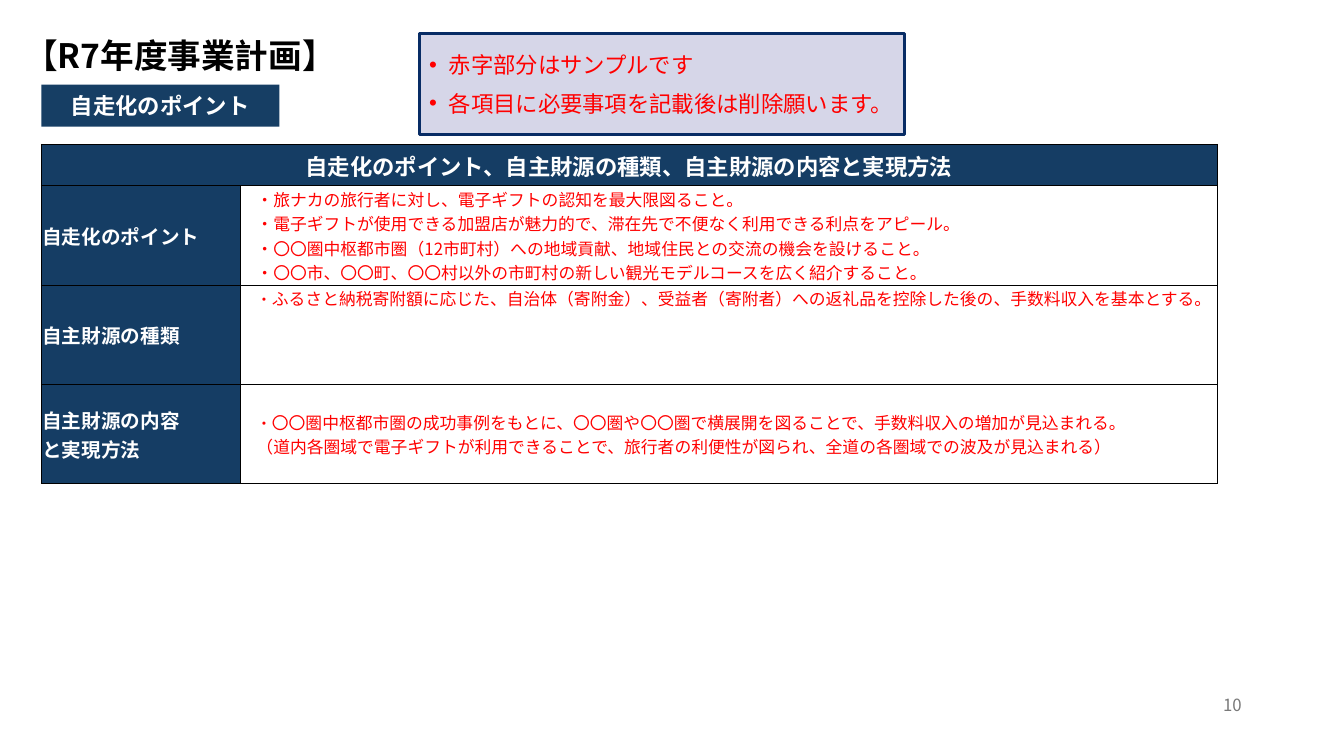
from dataclasses import dataclass

from lxml import etree
from pptx import Presentation
from pptx.dml.color import RGBColor
from pptx.enum import shapes, text
from pptx.oxml import ns
from pptx.util import Pt


@dataclass(frozen=True)
class Theme:
    """Colours, type sizes and font of the slide."""
    font: str = "Noto Sans CJK JP"
    black: str = "000000"
    white: str = "FFFFFF"
    red: str = "FF0000"
    grey: str = "797979"
    label: str = "163E64"
    header: str = "153D64"
    callout: str = "D6D6E8"
    callout_line: str = "082C65"
    title_size: int = 24
    heading_size: int = 16
    row_size: int = 14
    body_size: int = 12
    mark_size: int = 11


THEME = Theme()
LEFT, CENTER, RIGHT = text.PP_ALIGN.LEFT, text.PP_ALIGN.CENTER, text.PP_ALIGN.RIGHT
MIDDLE, TOP = text.MSO_ANCHOR.MIDDLE, text.MSO_ANCHOR.TOP

TABLE_HEADING = "自走化のポイント、自主財源の種類、自主財源の内容と実現方法"
TABLE_ROWS = [
    ("自走化のポイント", MIDDLE, [
        "・旅ナカの旅行者に対し、電子ギフトの認知を最大限図ること。",
        "・電子ギフトが使用できる加盟店が魅力的で、滞在先で不便なく利用できる利点をアピール。",
        "・〇〇圏中枢都市圏（12市町村）への地域貢献、地域住民との交流の機会を設けること。",
        "・〇〇市、〇〇町、〇〇村以外の市町村の新しい観光モデルコースを広く紹介すること。",
    ]),
    ("自主財源の種類", TOP, [
        [("・", THEME.mark_size),
         ("ふるさと納税寄附額に応じた、自治体（寄附金）、受益者（寄附者）への返礼品を控除した後の、"
          "手数料収入を基本とする。", THEME.body_size)],
    ]),
    ("自主財源の内容\n と実現方法".replace(" ", ""), MIDDLE, [
        [("・", THEME.mark_size),
         ("〇〇圏中枢都市圏の成功事例をもとに、〇〇圏や〇〇圏で横展開を図ることで、"
          "手数料収入の増加が見込まれる。", THEME.body_size)],
        "（道内各圏域で電子ギフトが利用できることで、旅行者の利便性が図られ、全道の各圏域での波及が見込まれる）",
    ]),
]


def apply(target, values):
    """Set each named value on the target."""
    for name, value in values.items():
        setattr(target, name, value)


def place(shape, box):
    """Move a shape to a box given in points."""
    apply(shape, dict(zip(("left", "top", "width", "height"), map(Pt, box))))


def paint(fill, color):
    """Give a fill one solid colour."""
    fill.solid()
    fill.fore_color.rgb = RGBColor.from_string(color)


def write(frame, paragraphs, size, color, bold=False, **layout):
    """Write paragraphs of plain text or (text, size) pieces."""
    for index, content in enumerate(paragraphs):
        paragraph = frame.add_paragraph() if index else frame.paragraphs[0]
        apply(paragraph, layout)
        pieces = [(content, size)] if isinstance(content, str) else content
        for piece, piece_size in pieces:
            for number, line in enumerate(piece.split("\n")):
                if number:
                    paragraph.add_line_break()
                run = paragraph.add_run()
                run.text = line
                apply(run.font, {"name": THEME.font, "size": Pt(piece_size), "bold": bold})
                run.font.color.rgb = RGBColor.from_string(color)
                east_asian = etree.SubElement(run.font._element, ns.qn("a:ea"))
                east_asian.set("typeface", THEME.font)


def add_panel(slide, box, color):
    """Add a flat rectangle and return it."""
    panel = slide.shapes.add_shape(shapes.MSO_SHAPE.RECTANGLE, *map(Pt, box))
    panel.shadow.inherit = False
    paint(panel.fill, color)
    panel.line.fill.background()
    apply(panel.text_frame, {"word_wrap": True, "vertical_anchor": MIDDLE})
    return panel


def add_title(slide, box):
    """Fill the title placeholder."""
    title = slide.shapes.title
    place(title, box)
    apply(title.text_frame, {"word_wrap": True, "vertical_anchor": MIDDLE,
                             "auto_size": text.MSO_AUTO_SIZE.NONE})
    write(title.text_frame, ["【R7年度事業計画】"], THEME.title_size, THEME.black, True,
          alignment=LEFT, line_spacing=0.9)


def add_section_label(slide, box):
    """Add the dark section label."""
    label = add_panel(slide, box, THEME.label)
    write(label.text_frame, ["自走化のポイント"], THEME.heading_size, THEME.white, True,
          alignment=CENTER)


def add_callout(slide, box):
    """Add the bulleted notice with its frame."""
    callout = add_panel(slide, box, THEME.callout)
    paint(callout.line.fill, THEME.callout_line)
    callout.line.width = Pt(2.25)
    frame = callout.text_frame
    write(frame, ["赤字部分はサンプルです", "各項目に必要事項を記載後は削除願います。"],
          THEME.heading_size, THEME.red, alignment=LEFT)
    frame.paragraphs[1].space_before = Pt(8)
    for paragraph in frame.paragraphs:
        properties = paragraph._p.get_or_add_pPr()
        properties.set("marL", str(Pt(14)))
        properties.set("indent", str(-Pt(14)))
        bullet_font = etree.SubElement(properties, ns.qn("a:buFont"))
        bullet_font.set("typeface", "Arial")
        etree.SubElement(properties, ns.qn("a:buChar")).set("char", "•")


def format_cell(cell, color, anchor=MIDDLE, indent=0):
    """Set a cell's fill, margins, anchor and thin borders."""
    paint(cell.fill, color)
    apply(cell, {"margin_left": Pt(0.72 + indent), "margin_right": Pt(0.72),
                 "margin_top": Pt(0.72), "margin_bottom": 0, "vertical_anchor": anchor})
    properties = cell._tc.get_or_add_tcPr()
    for index, side in enumerate("LRTB"):
        border = etree.Element(ns.qn(f"a:ln{side}"), w=str(Pt(0.5)))
        solid = etree.SubElement(border, ns.qn("a:solidFill"))
        etree.SubElement(solid, ns.qn("a:srgbClr")).set("val", THEME.black)
        properties.insert(index, border)


def add_plan_table(slide, box):
    """Add the heading row and the three plan rows."""
    left, top, width, height = box
    heading_height, label_width = 29.5, 142
    row_height = (height - heading_height) / len(TABLE_ROWS)
    table = slide.shapes.add_table(len(TABLE_ROWS) + 1, 2, *map(Pt, box)).table
    apply(table, {"first_row": False, "horz_banding": False})
    table.columns[0].width, table.columns[1].width = Pt(label_width), Pt(width - label_width)
    for index, row in enumerate(table.rows):
        row.height = Pt(row_height if index else heading_height)
    heading = table.cell(0, 0)
    heading.merge(table.cell(0, 1))
    for column in range(2):
        format_cell(table.cell(0, column), THEME.header)
    write(heading.text_frame, [TABLE_HEADING], THEME.heading_size, THEME.white, True,
          alignment=CENTER)
    for index, (name, anchor, details) in enumerate(TABLE_ROWS, 1):
        label, body = table.cell(index, 0), table.cell(index, 1)
        format_cell(label, THEME.header)
        write(label.text_frame, [name], THEME.row_size, THEME.white, True)
        format_cell(body, THEME.white, anchor, indent=11)
        write(body.text_frame, details, THEME.body_size, THEME.red)


def add_page_number(slide, box):
    """Add the page number at the lower right."""
    number = slide.shapes.add_textbox(*map(Pt, box))
    apply(number.text_frame, {"word_wrap": True, "vertical_anchor": MIDDLE})
    write(number.text_frame, ["10"], THEME.body_size, THEME.grey, alignment=RIGHT)


def main():
    """Build and save the slide."""
    presentation = Presentation()
    apply(presentation, {"slide_width": Pt(960), "slide_height": Pt(540)})
    slide = presentation.slides.add_slide(presentation.slide_layouts[5])
    add_section_label(slide, (29.5, 60.5, 170, 30))
    add_plan_table(slide, (29.5, 103, 840, 242.5))
    add_title(slide, (10, 8, 251, 66))
    add_callout(slide, (299.5, 23.8, 346.5, 72.5))
    add_page_number(slide, (678, 489, 216, 29))
    presentation.save("out.pptx")


if __name__ == "__main__":
    main()
